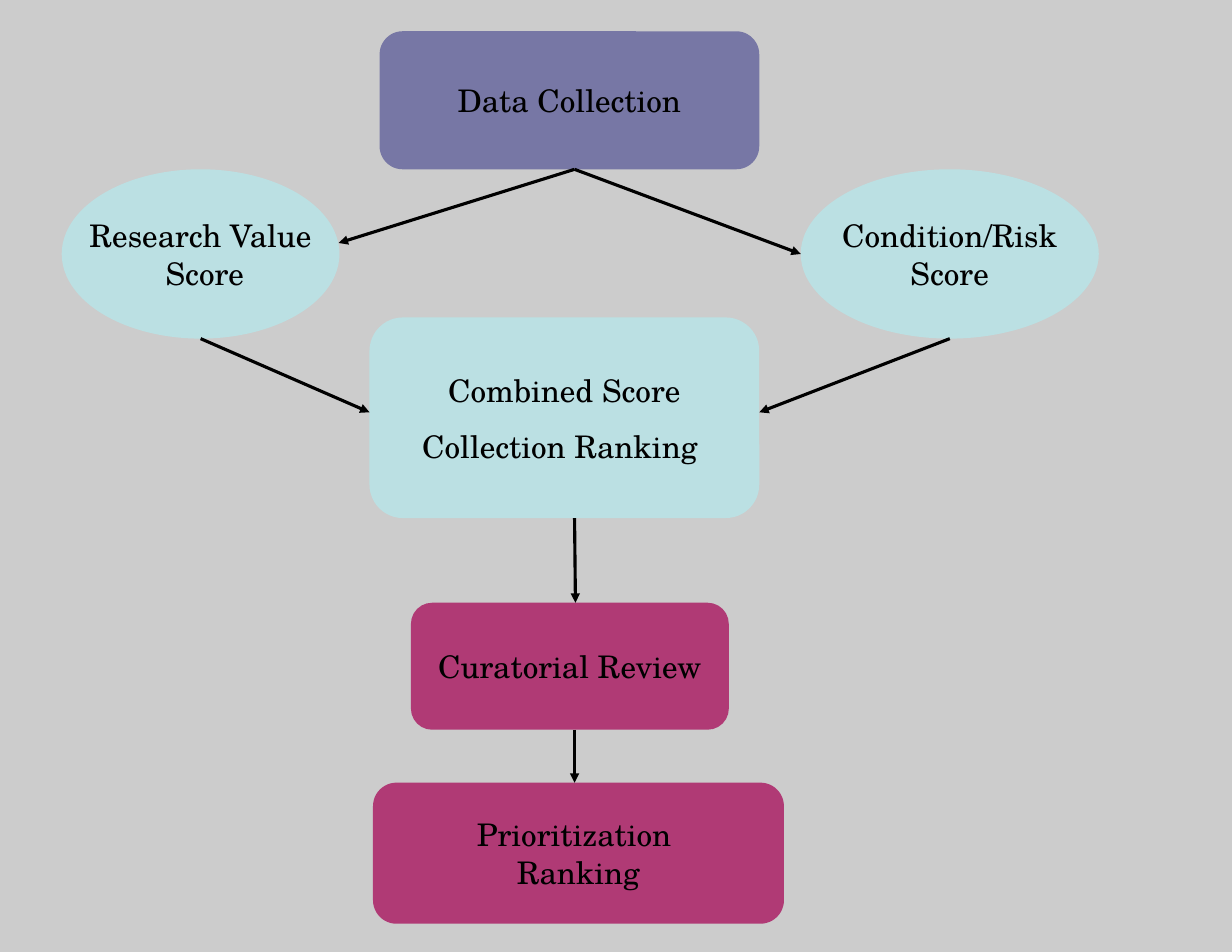
from lxml import etree
from pptx import Presentation
from pptx.dml.color import RGBColor
from pptx.enum import shapes, text
from pptx.oxml.ns import qn
from pptx.util import Cm, Pt

FONT = "TeX Gyre Schola"
BLACK, GREY = "000000", "CCCCCC"
PURPLE, AQUA, MAGENTA = "7777A5", "BBE0E3", "B03A75"
ROUNDED = shapes.MSO_SHAPE.ROUNDED_RECTANGLE
OVAL = shapes.MSO_SHAPE.OVAL

# kind, fill, (left, top, width, height) in cm, lines of text, gap between lines in points
STEPS = [
    (ROUNDED, PURPLE, (8.61, 0.71, 8.61, 3.13), ["Data Collection"], 0),
    (OVAL, AQUA, (1.4, 3.84, 6.3, 3.84), ["Research Value", " Score"], 0),
    (OVAL, AQUA, (18.16, 3.84, 6.76, 3.84), ["Condition/Risk", "Score"], 0),
    (ROUNDED, AQUA, (8.38, 7.2, 8.84, 4.55), ["Combined Score", "Collection Ranking "], 12),
    (ROUNDED, MAGENTA, (9.32, 13.67, 7.21, 2.88), ["Curatorial Review"], 0),
    (ROUNDED, MAGENTA, (8.46, 17.75, 9.32, 3.2), ["Prioritization ", "Ranking"], 0),
]

# from x, from y, to x, to y in cm
ARROWS = [
    (13.03, 3.84, 18.16, 5.76),   # data to condition score
    (13.03, 3.84, 7.68, 5.51),    # data to research score
    (4.55, 7.68, 8.38, 9.35),     # research score to combined
    (21.54, 7.68, 17.22, 9.35),   # condition score to combined
    (13.03, 11.75, 13.05, 13.67),  # combined to review
    (13.03, 16.55, 13.03, 17.75),  # review to ranking
]


def rgb(value):
    return RGBColor.from_string(value)


def add_step(s, kind, fill, box, lines, gap):
    sp = s.shapes.add_shape(kind, *(Cm(v) for v in box))
    sp.shadow.inherit = False
    sp.fill.solid()
    sp.fill.fore_color.rgb = rgb(fill)
    sp.line.fill.background()
    tf = sp.text_frame
    tf.word_wrap = False
    tf.vertical_anchor = text.MSO_ANCHOR.MIDDLE
    tf.margin_left = tf.margin_right = Cm(0.28)
    tf.margin_top = tf.margin_bottom = Cm(0.15)
    for i, line in enumerate(lines):
        p = tf.add_paragraph() if i else tf.paragraphs[0]
        p.alignment = text.PP_ALIGN.CENTER
        if i and gap:
            p.space_before = Pt(gap)
        r = p.add_run()
        r.text = line
        r.font.name = FONT
        r.font.size = Pt(20)
        r.font.color.rgb = rgb(BLACK)


def add_arrow(s, ends):
    cxn = s.shapes.add_connector(shapes.MSO_CONNECTOR.STRAIGHT, *(Cm(v) for v in ends))
    cxn.line.color.rgb = rgb(BLACK)
    cxn.line.width = Pt(2)
    etree.SubElement(cxn.line._get_or_add_ln(), qn("a:tailEnd"), type="triangle")
    etree.SubElement(cxn._element.spPr, qn("a:effectLst"))


def main():
    prs = Presentation()
    prs.slide_width, prs.slide_height = Cm(27.94), Cm(21.59)
    s = prs.slides.add_slide(prs.slide_layouts[6])
    s.background.fill.solid()
    s.background.fill.fore_color.rgb = rgb(GREY)

    # Steps of the process
    for step in STEPS:
        add_step(s, *step)

    # Flow between the steps
    for ends in ARROWS:
        add_arrow(s, ends)

    prs.save("out.pptx")


if __name__ == "__main__":
    main()
